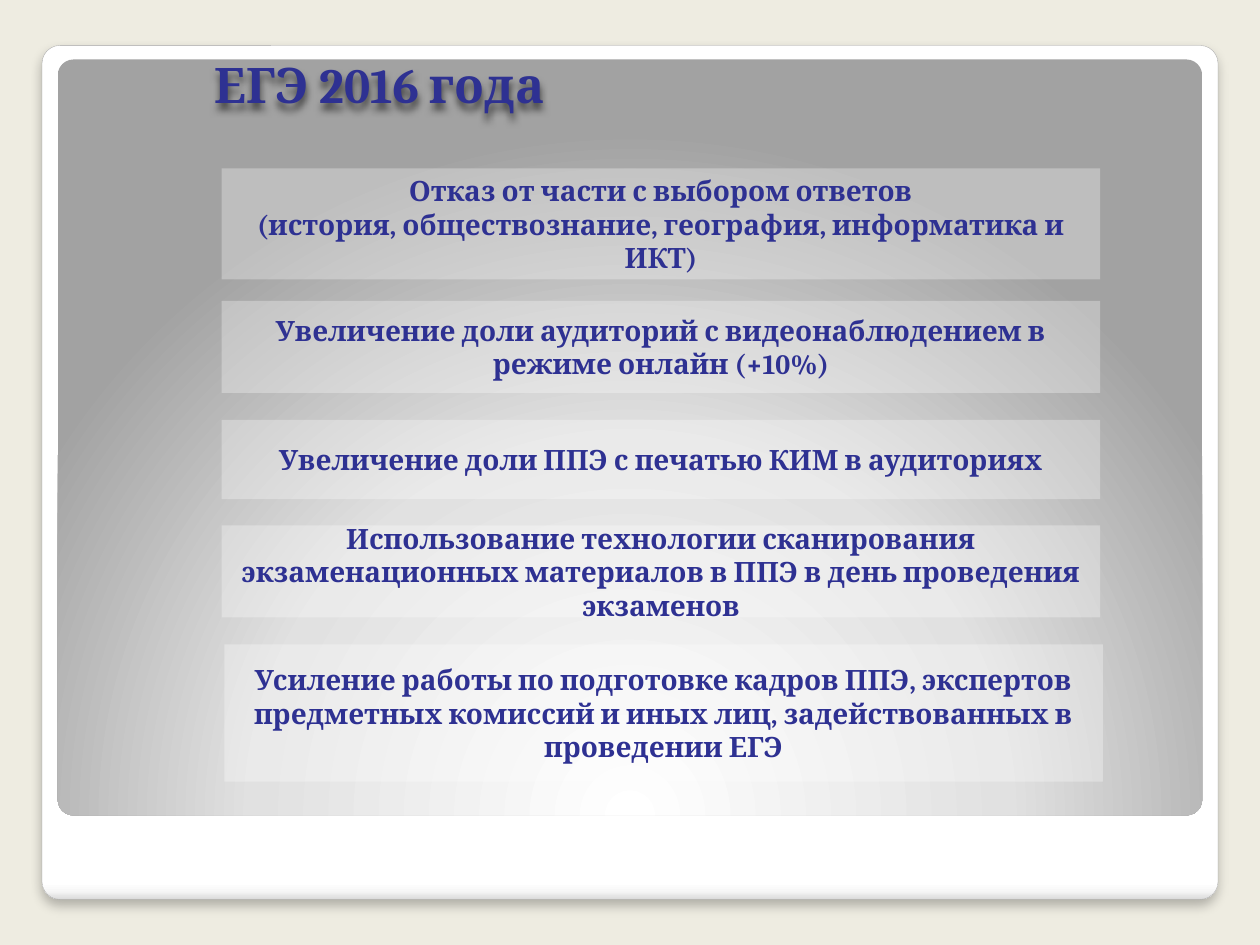
from dataclasses import dataclass

from lxml.etree import SubElement
from pptx import Presentation
from pptx.dml.color import RGBColor
from pptx.enum.dml import MSO_FILL
from pptx.enum.shapes import MSO_SHAPE as Preset
from pptx.enum.text import MSO_ANCHOR as Anchor, MSO_AUTO_SIZE as AutoSize, PP_ALIGN as Align
from pptx.oxml.ns import qn
from pptx.util import Pt

COLORS = {
    "page": "EEECE1",
    "text": "2E3192",
    "card": "FFFFFF",
    "edge": "A4A4A4",
    "shadow": "000000",
}
FONT = "Cambria"
CARD_WIDTH = 502
CARD_OPACITY = 31


@dataclass(frozen=True)
class Frame:
    left: float
    top: float
    width: float
    height: float

    def lengths(self) -> tuple:
        return Pt(self.left), Pt(self.top), Pt(self.width), Pt(self.height)


@dataclass(frozen=True)
class Panel:
    frame: Frame
    stops: tuple
    direction: str
    settings: dict


@dataclass(frozen=True)
class Card:
    top: float
    height: float
    lines: tuple
    left: float = 126.7


PANELS = (
    Panel(
        Frame(24, 26, 672, 488),
        ((0, "FFFFFF"), (98, "FFFFFF"), (99, "F7F7F7"), (100, "DADADA")),
        "lin",
        {"ang": "5400000", "scaled": "0"},
    ),
    Panel(
        Frame(33, 34, 654, 432),
        ((0, "FFFFFF"), (55, "E1E1E1"), (100, "A2A2A2")),
        "path",
        {"l": "50000", "t": "175000", "r": "50000", "b": "-75000"},
    ),
)
CARDS = (
    Card(96.2, 63.4, ("Отказ от части с выбором ответов",
                      "(история, обществознание, география, информатика и ИКТ)")),
    Card(172, 52.6, ("Увеличение доли аудиторий с видеонаблюдением в режиме онлайн (+10%)",)),
    Card(239.9, 45.4, ("Увеличение доли ППЭ с печатью КИМ в аудиториях",)),
    Card(300.3, 52.6, ("Использование технологии сканирования экзаменационных материалов "
                       "в ППЭ в день проведения экзаменов",)),
    Card(368.2, 78.5, ("Усиление работы по подготовке кадров ППЭ, экспертов предметных "
                       "комиссий и иных лиц, задействованных в проведении ЕГЭ",), left=128.2),
)


def color(name: str) -> RGBColor:
    return RGBColor.from_string(COLORS[name])


def write_text(shape, *lines: str, size: float, align: Align, anchor: Anchor) -> None:
    frame = shape.text_frame
    frame.word_wrap = True
    frame.vertical_anchor = anchor
    for index, line in enumerate(lines):
        para = frame.add_paragraph() if index else frame.paragraphs[0]
        para.alignment = align
        span = para.add_run()
        span.text = line
        span.font.name = FONT
        span.font.size = Pt(size)
        span.font.bold = True
        span.font.color.rgb = color("text")


def add_shadow(shape, opacity: int, blur: float, distance: float) -> None:
    shape.shadow.inherit = False
    effects = shape._element.spPr.find(qn("a:effectLst"))
    shadow = SubElement(effects, qn("a:outerShdw"), blurRad=str(Pt(blur)),
                        dist=str(Pt(distance)), dir="5400000", algn="t", rotWithShape="0")
    shade = SubElement(shadow, qn("a:srgbClr"), val=COLORS["shadow"])
    SubElement(shade, qn("a:alpha"), val=str(opacity * 1000))


def add_panel(page, panel: Panel):
    shape = page.shapes.add_shape(Preset.ROUNDED_RECTANGLE, *panel.frame.lengths())
    shape.adjustments[0] = 0.021
    shape.shadow.inherit = False
    shape.line.fill.background()
    shape.fill.gradient()
    gradient = shape._element.spPr.find(qn("a:gradFill"))
    for child in list(gradient):
        gradient.remove(child)
    stops = SubElement(gradient, qn("a:gsLst"))
    for position, shade in panel.stops:
        stop = SubElement(stops, qn("a:gs"), pos=str(position * 1000))
        SubElement(stop, qn("a:srgbClr"), val=shade)
    if panel.direction == "path":
        route = SubElement(gradient, qn("a:path"), path="circle")
        SubElement(route, qn("a:fillToRect"), **panel.settings)
    else:
        SubElement(gradient, qn("a:lin"), **panel.settings)
    return shape


def add_card(page, card: Card) -> None:
    frame = Frame(card.left, card.top, CARD_WIDTH, card.height)
    box = page.shapes.add_shape(Preset.RECTANGLE, *frame.lengths())
    box.shadow.inherit = False
    box.line.fill.background()
    box.fill.solid()
    box.fill.fore_color.rgb = color("card")
    shade = box._element.spPr.find(qn("a:solidFill"))[0]
    SubElement(shade, qn("a:alpha"), val=str(CARD_OPACITY * 1000))
    write_text(box, *card.lines, size=16, align=Align.CENTER, anchor=Anchor.MIDDLE)


def place_title(page, text: str, frame: Frame) -> None:
    title = page.shapes.title
    title.left, title.top, title.width, title.height = frame.lengths()
    write_text(title, text, size=28, align=Align.LEFT, anchor=Anchor.TOP)
    title.text_frame.auto_size = AutoSize.SHAPE_TO_FIT_TEXT
    add_shadow(title, opacity=60, blur=4, distance=4)
    page.shapes._spTree.append(title._element)


def main() -> None:
    deck = Presentation()
    deck.slide_width, deck.slide_height = Pt(720), Pt(540)
    page = deck.slides.add_slide(deck.slide_layouts[5])
    page.background.fill.solid()
    page.background.fill.fore_color.rgb = color("page")

    outer, _ = [add_panel(page, panel) for panel in PANELS]
    outer.line.color.rgb = color("edge")
    outer.line.width = Pt(0.16)
    add_shadow(outer, opacity=25, blur=6, distance=4)

    place_title(page, "ЕГЭ 2016 года", Frame(115.2, 27.4, 567.4, 41))
    for card in CARDS:
        add_card(page, card)
    deck.save("out.pptx")


if __name__ == "__main__":
    main()
